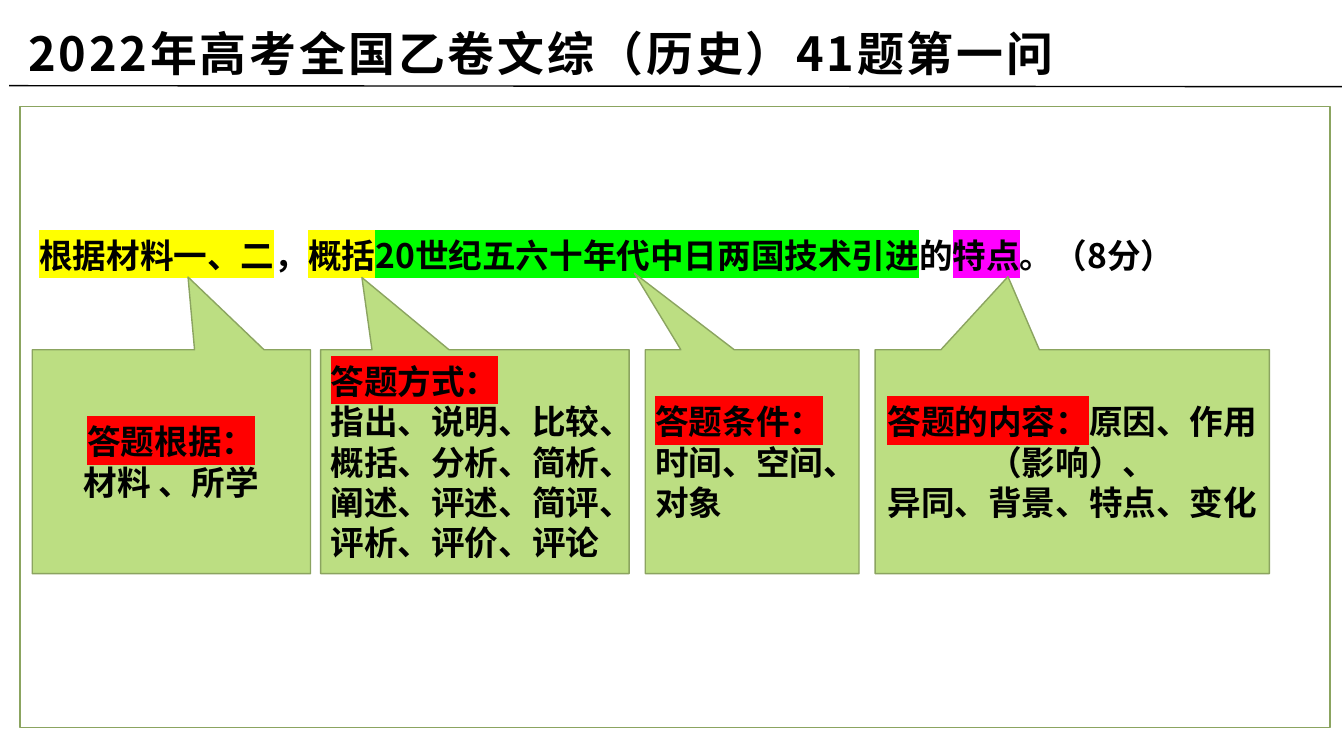
from lxml import etree
from pptx import Presentation
from pptx import util as u
from pptx.dml.color import RGBColor
from pptx.enum import shapes, text
from pptx.oxml.ns import qn

COLORS = {
    "black": "000000", "leaf": "BCDE82", "edge": "8BA460", "red": "FF0000",
    "yellow": "FFFF00", "green": "00FF00", "pink": "FF00FF",
}
CJK = "Noto Sans CJK SC"


def tint(name):
    return RGBColor.from_string(COLORS[name])


def write(para, words, size=24, font=CJK, mark=None, gap=0):
    run = para.add_run()
    run.text = words
    run.font.size = u.Pt(size)
    run.font.bold = True
    run.font.color.rgb = tint("black")
    props = run.font._element
    if gap:
        props.set("spc", str(gap * 100))
    if mark:
        light = etree.SubElement(props, qn("a:highlight"))
        etree.SubElement(light, qn("a:srgbClr"), val=COLORS[mark])
    run.font.name = font
    etree.SubElement(props, qn("a:ea"), typeface=CJK)


class Board:
    def __init__(self, deck):
        self.slide = deck.slides.add_slide(deck.slide_layouts[6])
        self.items = self.slide.shapes

    def block(self, kind, box, fill=None):
        shape = self.items.add_shape(kind, *map(u.Inches, box))
        shape.shadow.inherit = False
        if fill:
            shape.fill.solid()
            shape.fill.fore_color.rgb = tint(fill)
        else:
            shape.fill.background()
        shape.line.color.rgb = tint("edge")
        shape.line.width = u.Pt(1)
        return shape

    def label(self, box, runs, **style):
        frame = self.items.add_textbox(*map(u.Inches, box)).text_frame
        frame.word_wrap = True
        frame.vertical_anchor = text.MSO_ANCHOR.MIDDLE
        frame.margin_left = u.Inches(0.11)
        frame.margin_top = frame.margin_bottom = 0
        for words, mark in runs:
            write(frame.paragraphs[0], words, mark=mark, **style)

    def rule(self, start, end):
        line = self.items.add_connector(
            shapes.MSO_CONNECTOR.STRAIGHT, *map(u.Inches, start + end))
        line.line.color.rgb = tint("black")
        line.line.width = u.Pt(1)
        etree.SubElement(line._element.spPr, qn("a:effectLst"))

    def callout(self, left, width, tip, align, lines):
        shape = self.block(shapes.MSO_SHAPE.RECTANGULAR_CALLOUT,
                           (left, 3.47, width, 2.22), "leaf")
        shape.adjustments[0], shape.adjustments[1] = tip
        frame = shape.text_frame
        frame.word_wrap = True
        frame.vertical_anchor = text.MSO_ANCHOR.MIDDLE
        for i, runs in enumerate(lines):
            para = frame.add_paragraph() if i else frame.paragraphs[0]
            para.alignment = align
            para.line_spacing = u.Pt(28.8)
            for words, mark in runs:
                write(para, words, font="Arial", mark=mark)


def main():
    deck = Presentation()
    deck.slide_width, deck.slide_height = u.Inches(13.33), u.Inches(7.5)
    board = Board(deck)
    board.label((0.17, 0.2, 11.87, 0.65),
                [("2022年高考全国乙卷文综（历史）41题第一问", None)],
                size=33.5, gap=2)
    board.block(shapes.MSO_SHAPE.RECTANGLE, (0.2, 1.06, 12.99, 6.16))
    board.label((0.28, 2.29, 12.8, 0.48), [
        ("根据材料一、二", "yellow"), ("，", None), ("概括", "yellow"),
        ("20世纪五六十年代中日两国技术引进", "green"), ("的", None),
        ("特点", "pink"), ("。（8分）", None),
    ])
    board.rule((0.09, 0.85), (13.31, 0.86))

    left, mid = text.PP_ALIGN.LEFT, text.PP_ALIGN.CENTER
    board.callout(0.32, 2.76, (0.06, -0.825), mid, [
        [("答题根据：", "red")], [("材料 、所学", None)]])
    board.callout(3.18, 3.06, (-0.366, -0.823), left, [
        [("答题方式：", "red")],
        [("指出、说明、比较、概括、分析、简析、阐述、评述、简评、评析、评价、评论", None)]])
    board.callout(6.4, 2.12, (-0.551, -0.842), left, [
        [("答题条件：", "red")], [("时间、空间、对象", None)]])
    board.callout(8.68, 3.91, (-0.163, -0.827), mid, [
        [("答题的内容：", "red"), ("原因、作用（影响）、", None)],
        [("异同、背景、特点、变化", None)]])
    deck.save("out.pptx")


if __name__ == "__main__":
    main()
